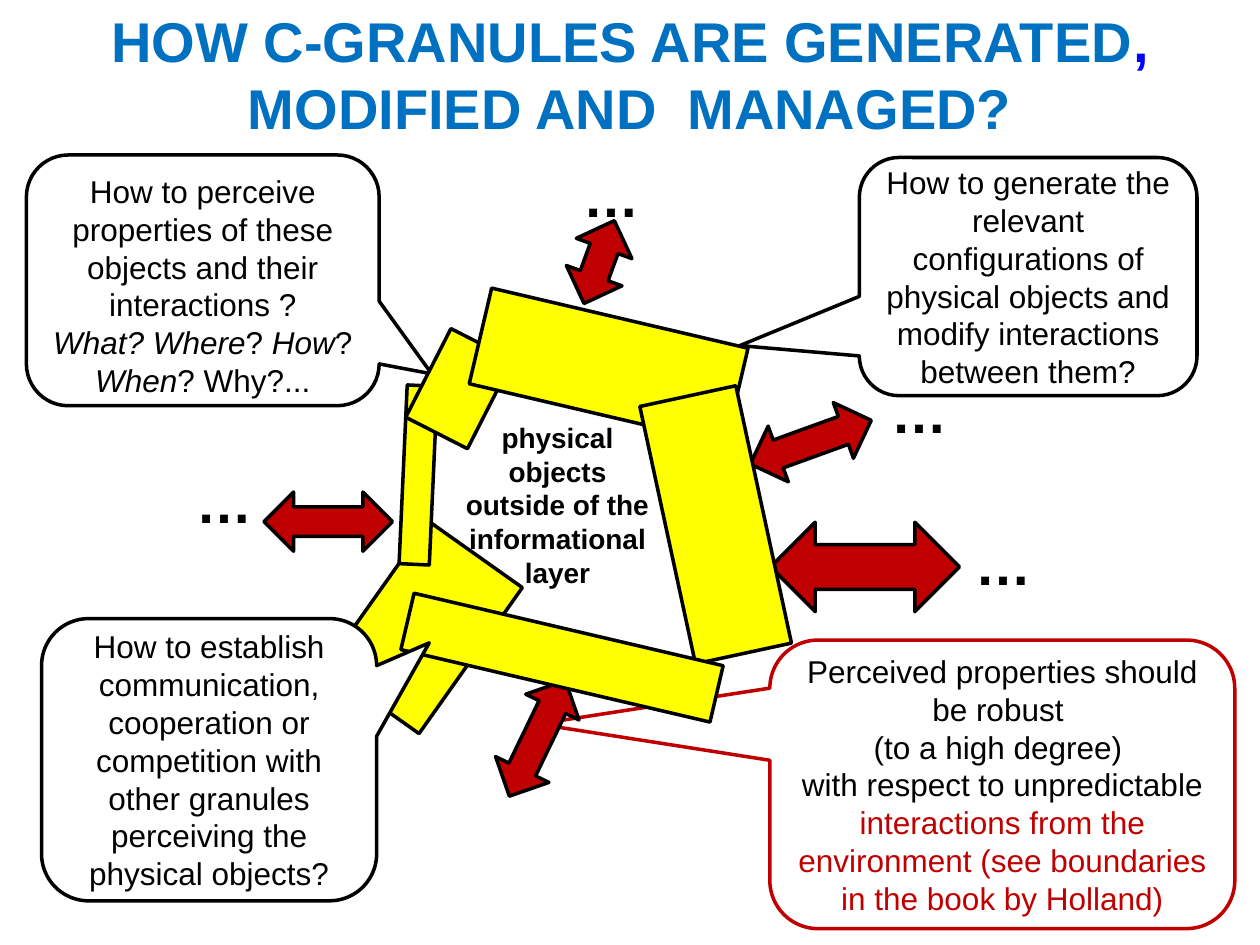
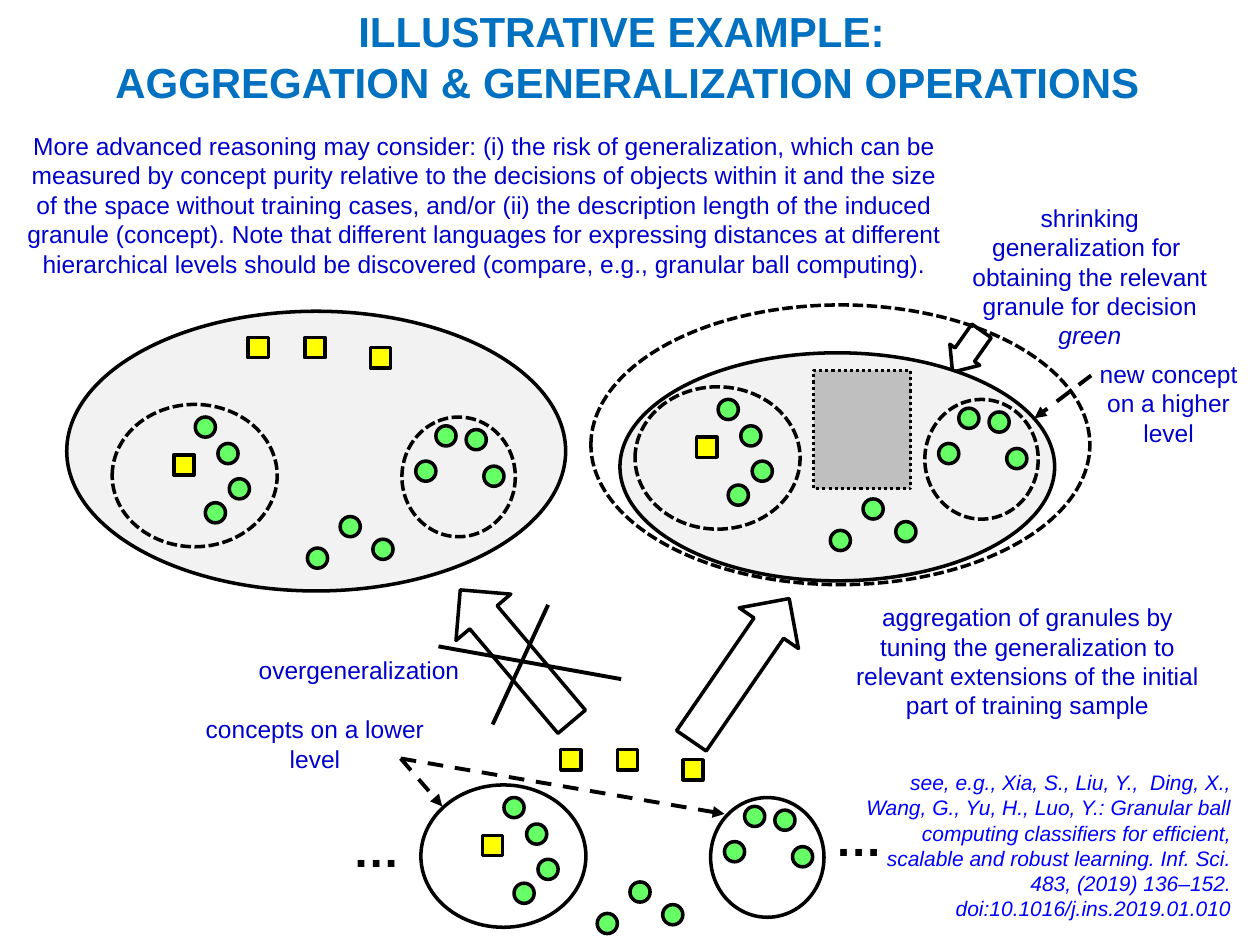
"""Build two slides on generating, aggregating and generalizing granules."""
import lxml.etree
import pptx
import pptx.dml.color
import pptx.enum.dml
import pptx.enum.shapes
import pptx.enum.text
import pptx.oxml.ns
import pptx.util

RGB = pptx.dml.color.RGBColor
SHAPE = pptx.enum.shapes.MSO_SHAPE
DASH = pptx.enum.dml.MSO_LINE
ALIGN = pptx.enum.text.PP_ALIGN
ANCHOR = pptx.enum.text.MSO_ANCHOR

BLACK = RGB(0x00, 0x00, 0x00)
WHITE = RGB(0xFF, 0xFF, 0xFF)
TITLE_BLUE = RGB(0x00, 0x70, 0xC0)
LABEL_BLUE = RGB(0x00, 0x00, 0xCC)
PURE_BLUE = RGB(0x00, 0x00, 0xFF)
RED = RGB(0xC0, 0x00, 0x00)
YELLOW = RGB(0xFF, 0xFF, 0x00)
GREEN = RGB(0x66, 0xFF, 0x66)
PALE_GREY = RGB(0xF2, 0xF2, 0xF2)
MID_GREY = RGB(0xBF, 0xBF, 0xBF)

FONT = "Arial"
COLUMNS, ROWS = 100, 75
CELL = pptx.util.Inches(0.1)
MARK = 1.6

LARGE_CLUSTER = (0, 0, 13.1, 11.3)
SMALL_CLUSTER = (23, 1, 9, 9.5)
CLUSTER_SQUARES = [(4.9, 4)]
CLUSTER_DOTS = [(6.6, 1), (8.4, 3.1), (7.4, 7.8), (9.3, 5.9),
                (28.1, 2), (29.5, 4.9), (25.7, 1.7), (24.1, 4.5)]
LOOSE_SQUARES = [(0, 0), (4.5, 0), (9.7, 0.8)]
LOOSE_DOTS = [(0, 0), (2.6, 1.8), (-2.6, 2.5)]


def cells(*values):
    """Turn grid cells into lengths."""
    return [pptx.util.Emu(round(v * CELL)) for v in values]


def write(sp, *paragraphs, size=14, color=BLACK, bold=False, italic=False,
          align=ALIGN.CENTER, anchor=ANCHOR.TOP):
    """Fill a shape with paragraphs, each a string or a list of (text, overrides)."""
    tf = sp.text_frame
    tf.word_wrap = True
    tf.vertical_anchor = anchor
    for i, runs in enumerate(paragraphs):
        p = tf.paragraphs[0] if i == 0 else tf.add_paragraph()
        p.alignment = align
        for text, changes in [(runs, {})] if isinstance(runs, str) else runs:
            r = p.add_run()
            r.text = text
            r.font.name = FONT
            r.font.size = pptx.util.Pt(size)
            r.font.bold = bold
            r.font.italic = changes.get("italic", italic)
            r.font.color.rgb = changes.get("color", color)


def label(s, box, *paragraphs, **style):
    """Add a text box."""
    sp = s.shapes.add_textbox(*cells(*box))
    write(sp, *paragraphs, **style)


def title(s, box, *paragraphs, **style):
    """Add the slide title in the common title style."""
    label(s, box, *paragraphs, color=TITLE_BLUE, bold=True, **style)


def ellipsis(s, x, y, size=32):
    """Add a bold ellipsis standing for further items."""
    label(s, (x, y, 9.4, 6.4), "…", size=size, bold=True, align=ALIGN.LEFT)


def figure(s, kind, box, fill=None, rotation=0, line=BLACK, width=2, dash=None, adjust=()):
    """Add an outlined preset shape."""
    sp = s.shapes.add_shape(kind, *cells(*box))
    sp.shadow.inherit = False
    sp.rotation = rotation
    if fill is None:
        sp.fill.background()
    else:
        sp.fill.solid()
        sp.fill.fore_color.rgb = fill
    sp.line.color.rgb = line
    sp.line.width = pptx.util.Pt(width)
    if dash:
        sp.line.dash_style = dash
    for i, value in enumerate(adjust):
        sp.adjustments[i] = value
    return sp


def callout(s, box, tip, *paragraphs, line=BLACK, drop=0):
    """Add a rounded speech balloon whose tip is a share of its size."""
    sp = figure(s, SHAPE.ROUNDED_RECTANGULAR_CALLOUT, box, WHITE, line=line,
                adjust=(*tip, 0.167))
    write(sp, *paragraphs, size=18, anchor=ANCHOR.MIDDLE)
    sp.text_frame.margin_top += cells(drop)[0]


def stroke(s, start, end, arrow=False):
    """Add a straight line, or a dashed arrow."""
    c = s.shapes.add_connector(pptx.enum.shapes.MSO_CONNECTOR.STRAIGHT,
                               *cells(*start, *end))
    c.line.color.rgb = BLACK
    c.line.width = pptx.util.Pt(2.25)
    if arrow:
        c.line.dash_style = DASH.DASH
        ln = c.line._get_or_add_ln()
        lxml.etree.SubElement(ln, pptx.oxml.ns.qn("a:tailEnd"), type="triangle")
    lxml.etree.SubElement(c._element.spPr, pptx.oxml.ns.qn("a:effectLst"))


def marks(s, kind, fill, x, y, offsets):
    """Scatter equal small marks around an origin."""
    for dx, dy in offsets:
        figure(s, kind, (x + dx, y + dy, MARK, MARK), fill)


def clusters(s, x, y, dash=None):
    """Add the large and the small cluster with their objects."""
    for dx, dy, w, h in (LARGE_CLUSTER, SMALL_CLUSTER):
        figure(s, SHAPE.OVAL, (x + dx, y + dy, w, h), dash=dash)
    marks(s, SHAPE.RECTANGLE, YELLOW, x, y, CLUSTER_SQUARES)
    marks(s, SHAPE.OVAL, GREEN, x, y, CLUSTER_DOTS)


def loose_squares(s, x, y):
    """Add the yellow objects outside the clusters."""
    marks(s, SHAPE.RECTANGLE, YELLOW, x, y, LOOSE_SQUARES)


def loose_dots(s, x, y):
    """Add the green objects outside the clusters."""
    marks(s, SHAPE.OVAL, GREEN, x, y, LOOSE_DOTS)


def questions_slide(s):
    """Show physical objects, their interactions and the questions about them."""
    figure(s, SHAPE.RECTANGLE, (29.1, 42.7, 9.1, 14.2), YELLOW, 35.3)
    title(s, (0, 0, COLUMNS, 11.2),
          [("HOW C-GRANULES ARE GENERATED", {}), (", ", {"color": PURE_BLUE}),
           ("MODIFIED AND  MANAGED?", {})], size=32)
    for x, y in [(14.6, 36.6), (76.4, 41.5), (45.3, 12.3), (69.8, 29.5)]:
        ellipsis(s, x, y)
    label(s, (35.6, 32.9, 17.3, 14.5), "physical objects",
          "outside of the informational layer", size=16, bold=True)

    callout(s, (68.2, 12.5, 26.8, 18.9), (-0.854, 0.29),
            "How to generate the relevant configurations of physical objects "
            "and modify interactions between them?")
    slanted = {"italic": True}
    callout(s, (2.1, 12.3, 28, 19.9), (0.649, 0.373),
            "How to perceive properties of these objects and their interactions ?",
            [("What? Where", slanted), ("? ", {}), ("How", slanted), ("? ", {}),
             ("When", slanted), ("? Why?...", {})], drop=0.8)
    callout(s, (61.1, 50.8, 36.9, 22.9), (-0.999, -0.209),
            "Perceived properties should be robust ", "(to a high degree) ",
            [("with respect to unpredictable ", {}),
             ("interactions from the environment (see boundaries in the book by Holland)",
              {"color": RED})], line=RED)

    interactions = [((45.2, 17.3, 4.7, 7), 200.1), ((62, 30, 4.7, 10.2), 70.1),
                    ((65.1, 37.5, 7.1, 15), 90), ((40.3, 53.5, 4.7, 10.2), 25.8),
                    ((23.7, 36.3, 4.7, 10.2), 90)]
    for box, rotation in interactions:
        figure(s, SHAPE.UP_DOWN_ARROW, box, RED, rotation)
    objects = [((32, 30.6, 2.4, 14.2), 2.6), ((33.7, 26.9, 5.5, 7.9), 27),
               ((44.4, 18.6, 7.8, 20.9), 103.2), ((52.9, 31.2, 7.8, 20.9), 167.8),
               ((42.3, 39.6, 4.6, 25.2), 103.2)]
    for box, rotation in objects:
        figure(s, SHAPE.RECTANGLE, box, YELLOW, rotation)

    callout(s, (3.3, 49.1, 26.6, 22.4), (0.657, -0.414),
            "How to establish communication, cooperation or competition with "
            "other granules perceiving the physical objects?")


def example_slide(s):
    """Compare overgeneralization with a well tuned aggregation of granules."""
    title(s, (0, 0.8, 99.6, 7.3), "ILLUSTRATIVE EXAMPLE: ",
          "AGGREGATION & GENERALIZATION OPERATIONS", size=24, anchor=ANCHOR.MIDDLE)

    clusters(s, 33.4, 62.3)
    loose_squares(s, 44.5, 59.5)
    loose_dots(s, 50, 70)
    ellipsis(s, 65.3, 63.7, size=27)
    ellipsis(s, 27, 64.6, size=27)

    figure(s, SHAPE.OVAL, (5.3, 24.7, 39.6, 22.2), PALE_GREY)
    clusters(s, 8.9, 32.1, DASH.SQUARE_DOT)
    loose_squares(s, 19.7, 26.8)
    loose_dots(s, 27, 41)

    figure(s, SHAPE.DOWN_ARROW, (75.3, 25.9, 2.9, 4), WHITE, 35.1, adjust=(0.649, 0.582))
    figure(s, SHAPE.OVAL, (49.2, 28, 34.5, 18.1), PALE_GREY)
    clusters(s, 50.4, 30.7, DASH.SQUARE_DOT)
    loose_dots(s, 68.5, 39.6)
    figure(s, SHAPE.OVAL, (46.9, 24.2, 39.6, 22.2), dash=DASH.SQUARE_DOT)
    figure(s, SHAPE.RECTANGLE, (64.6, 29.4, 7.7, 9.4), MID_GREY, width=1.75,
           dash=DASH.ROUND_DOT)

    for x, y, rotation in [(55.9, 46.3, 214.5), (38.1, 45.2, 139.8)]:
        figure(s, SHAPE.DOWN_ARROW, (x, y, 5.7, 13.7), rotation=rotation)
    stroke(s, (43.5, 48), (39.1, 57.5))
    stroke(s, (49.3, 53.9), (34.8, 51.3))
    for start, end in [((86.6, 29.8), (82.1, 33.2)), ((31.8, 60.2), (35.1, 64)),
                       ((31.8, 60.2), (57.5, 64.6))]:
        stroke(s, start, end, arrow=True)

    notes = [
        ((0.8, 9.9, 75.3, 12.8),
         ["More advanced reasoning may consider: (i) the risk of generalization, which "
          "can be measured by concept purity relative to the decisions of objects within "
          "it and the size of the space without training cases, and/or (ii) the "
          "description length of the induced granule (concept). Note that different "
          "languages for expressing distances at different hierarchical levels should be "
          "discovered (compare, e.g., granular ball computing)."]),
        ((75.7, 15.6, 21.6, 12.9),
         ["shrinking generalization for ",
          [("obtaining the relevant granule for decision ", {}),
           ("green", {"italic": True})]]),
        ((85.9, 28, 13.7, 8.1), ["new concept on a higher level"]),
        ((66.2, 47.3, 30.7, 10.5),
         ["aggregation of granules by tuning the generalization to relevant extensions "
          "of the initial part of training sample"]),
        ((16.7, 51.5, 23.6, 3.4), ["overgeneralization"]),
        ((14, 56.2, 22, 5.8), ["concepts on a lower level"]),
    ]
    for box, paragraphs in notes:
        label(s, box, *paragraphs, color=LABEL_BLUE)
    label(s, (66.3, 60.6, 32.4, 13.1),
          "see, e.g., Xia, S., Liu, Y.,  Ding, X., Wang, G., Yu, H., Luo, Y.: Granular "
          "ball computing classifiers for efficient, scalable and robust learning. Inf. "
          "Sci. 483, (2019) 136–152. doi:10.1016/j.ins.2019.01.010",
          size=12, color=PURE_BLUE, italic=True, align=ALIGN.RIGHT)


def main():
    """Build and save the presentation."""
    prs = pptx.Presentation()
    prs.slide_width, prs.slide_height = cells(COLUMNS, ROWS)
    for build in (questions_slide, example_slide):
        build(prs.slides.add_slide(prs.slide_layouts[6]))
    prs.save("out.pptx")


if __name__ == "__main__":
    main()
